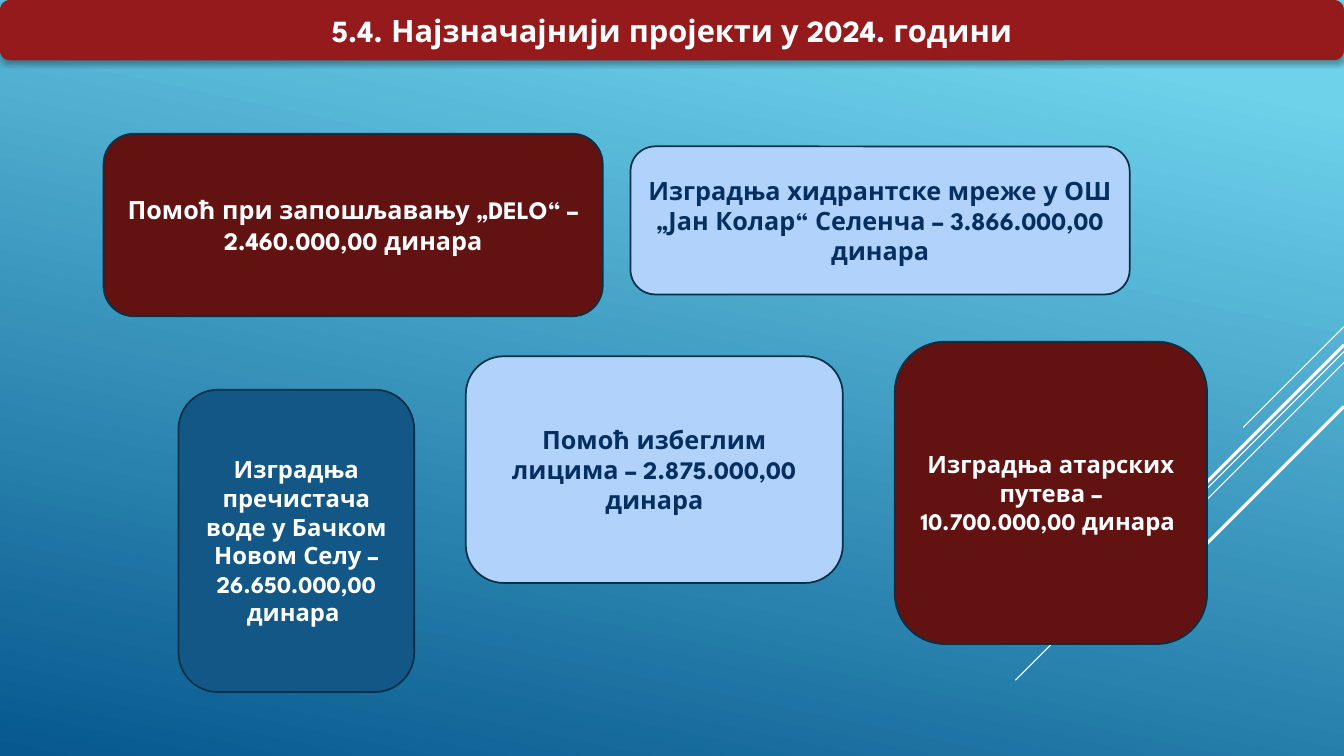
from dataclasses import dataclass

from lxml.etree import SubElement
from pptx import Presentation
from pptx.dml.color import RGBColor
from pptx.enum.shapes import MSO_CONNECTOR, MSO_SHAPE
from pptx.enum.text import MSO_ANCHOR, PP_ALIGN
from pptx.oxml.ns import qn
from pptx.util import Cm, Pt


@dataclass(frozen=True)
class Theme:
    """Colours, font and type sizes of the slide."""
    font: str = "League Spartan"
    sky: str = "6ED2EB"
    deep: str = "06588E"
    white: str = "FFFFFF"
    navy: str = "052F61"
    outline: str = "043148"
    banner: str = "941A1B"
    maroon: str = "631212"
    pale: str = "B1D3FB"
    blue: str = "125785"
    title_size: int = 22
    wide_size: int = 18
    narrow_size: int = 17


THEME = Theme()
WIDTH, HEIGHT = 33.87, 19.05

RAYS = [
    (8.23, 2.54, 0.75),
    (8.86, 8.28, 0.75),
    (9.13, 5.27, 0.75),
    (8.69, 4.85, 2.25),
    (10.24, 3.53, 2.25),
]

PROJECTS = [
    ("Помоћ при запошљавању „DELO“ – 2.460.000,00 динара",
     (2.61, 3.37, 12.58, 4.6), THEME.maroon, THEME.white, THEME.wide_size),
    ("Изградња хидрантске мреже у ОШ „Јан Колар“ Селенча – 3.866.000,00 динара",
     (15.89, 3.69, 12.58, 3.73), THEME.pale, THEME.navy, THEME.wide_size),
    ("Изградња атарских путева – 10.700.000,00 динара ",
     (22.55, 8.61, 7.87, 7.62), THEME.maroon, THEME.white, THEME.narrow_size),
    ("Помоћ избеглим лицима – 2.875.000,00 динара",
     (11.74, 8.98, 9.5, 5.71), THEME.pale, THEME.navy, THEME.wide_size),
    ("Изградња пречистача воде у Бачком Новом Селу – 26.650.000,00 динара ",
     (4.5, 9.82, 5.94, 7.62), THEME.blue, THEME.white, THEME.narrow_size),
]


def colour(code):
    """Return the colour object for a hex code."""
    return RGBColor.from_string(code)


def paint_background(page):
    """Fill the page with the slanted sky gradient."""
    fill = page.background.fill
    fill.gradient()
    fill.gradient_angle = 258
    stops = ((0.1, THEME.sky), (1, THEME.deep))
    for stop, (position, code) in zip(fill.gradient_stops, stops):
        stop.position = position
        stop.color.rgb = colour(code)


def add_ray(group, top, run, weight):
    """Draw a 45-degree line running down and left from the right edge."""
    ray = group.shapes.add_connector(
        MSO_CONNECTOR.STRAIGHT,
        Cm(WIDTH), Cm(top), Cm(WIDTH - run), Cm(top + run))
    ray.line.color.rgb = colour(THEME.white)
    ray.line.width = Pt(weight)
    SubElement(ray._element.spPr, qn("a:effectLst"))


def add_card(page, text, place, fill, ink, size):
    """Add a borderless rounded box with bold centred text."""
    box = page.shapes.add_shape(
        MSO_SHAPE.ROUNDED_RECTANGLE, *(Cm(length) for length in place))
    box.shadow.inherit = False
    box.fill.solid()
    box.fill.fore_color.rgb = colour(fill)
    box.line.fill.background()
    frame = box.text_frame
    frame.word_wrap = True
    frame.vertical_anchor = MSO_ANCHOR.MIDDLE
    para = frame.paragraphs[0]
    para.text = text
    para.alignment = PP_ALIGN.CENTER
    para.font.name = THEME.font
    para.font.size = Pt(size)
    para.font.bold = True
    para.font.color.rgb = colour(ink)
    return box


def outline_card(box):
    """Give a box the dark outline."""
    box.line.color.rgb = colour(THEME.outline)
    box.line.width = Pt(1.25)


def drop_shadow(box):
    """Give a box a soft shadow falling straight down."""
    effects = box._element.spPr.find(qn("a:effectLst"))
    shadow = SubElement(
        effects, qn("a:outerShdw"), blurRad=str(Pt(3.5)), dist=str(Pt(2.2)),
        dir="5400000", algn="ctr", rotWithShape="0")
    black = SubElement(shadow, qn("a:srgbClr"), val="000000")
    SubElement(black, qn("a:alpha"), val="32000")


def main():
    """Build and save the slide."""
    deck = Presentation()
    deck.slide_width, deck.slide_height = Cm(WIDTH), Cm(HEIGHT)
    page = deck.slides.add_slide(deck.slide_layouts[6])
    paint_background(page)
    rays = page.shapes.add_group_shape()
    for ray in RAYS:
        add_ray(rays, *ray)
    banner = add_card(
        page, "5.4. Најзначајнији пројекти у 2024. години",
        (0, 0, WIDTH, 1.52), THEME.banner, THEME.white, THEME.title_size)
    drop_shadow(banner)
    for project in PROJECTS:
        outline_card(add_card(page, *project))
    deck.save("out.pptx")


if __name__ == "__main__":
    main()
